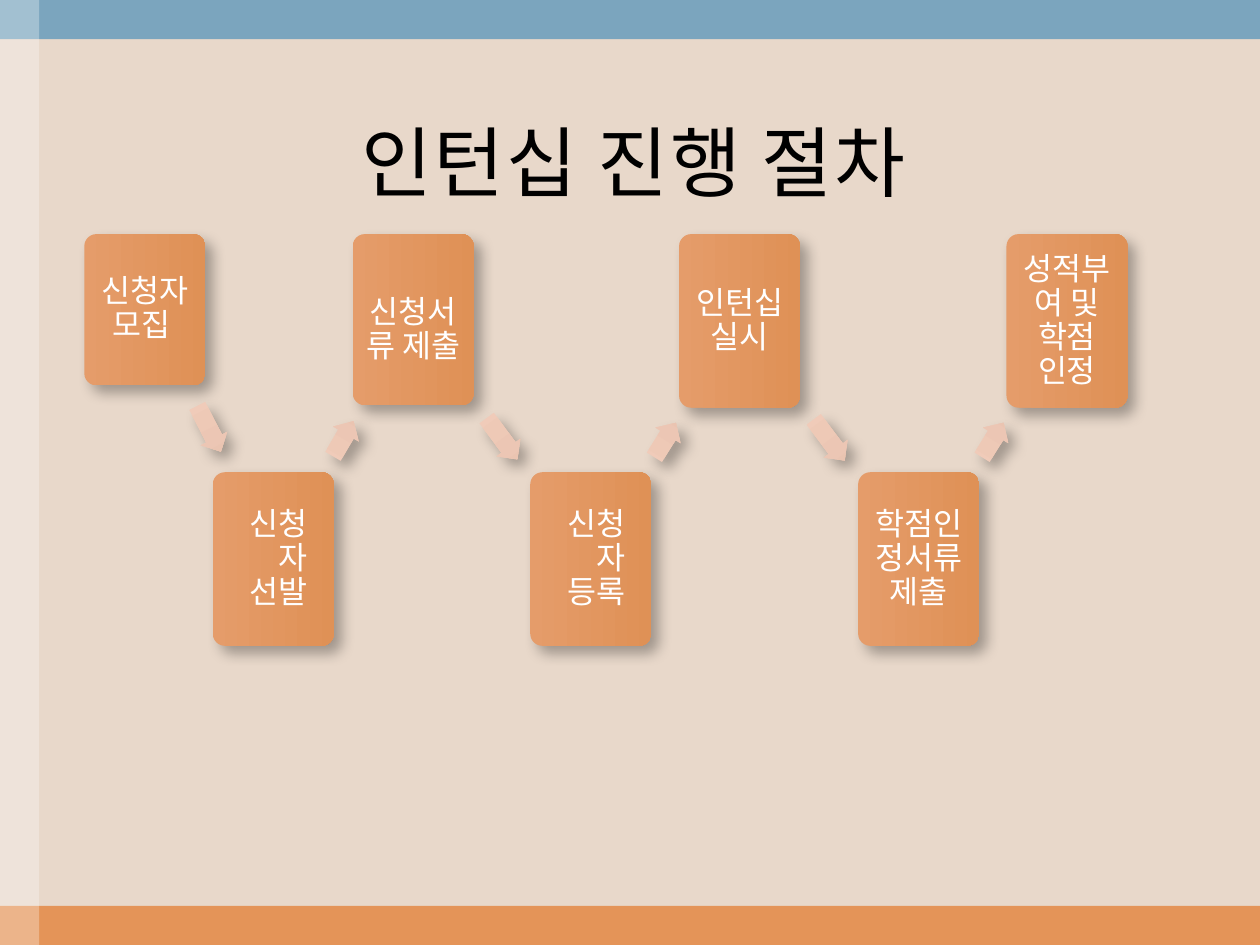
from math import atan2, degrees
from pptx import Presentation
from pptx.dml.color import RGBColor as Rgb
from pptx.enum.shapes import MSO_SHAPE as Kind
from pptx.enum.text import MSO_ANCHOR as Anchor, PP_ALIGN as Align
from pptx.oxml.ns import qn
from pptx.util import Cm, Pt
from lxml.etree import SubElement as Sub

HUES = {"sand": "E8D8CA", "blue": "7BA5BE", "rust": "E49458",
        "white": "FFFFFF", "black": "000000",
        "card": ("E59C6A", "DF9156"), "arrow": ("F0CBB9", "EAC4B1")}
FACE = "Noto Sans CJK KR"
WIDE, HIGH, EDGE = 25.4, 19.05, 0.79
STEPS = [("신청자 모집 ", 1.7, 3.05), ("신청자\v선발", 4.29, 3.5),
         ("신청서류 제출", 7.11, 3.45), ("신청자\v등록", 10.69, 3.5),
         ("인턴십 실시", 13.69, 3.5), ("학점인정서류 제출", 17.3, 3.5),
         ("성적부여 및 학점 인정", 20.29, 3.5)]
CARD, DROP = 2.44, 4.8


def hue(name):
    """Return the colour of the given name."""
    return Rgb.from_string(HUES[name])


def write(frame, text, size, tint, align=Align.CENTER):
    """Put one styled paragraph into a frame."""
    frame.word_wrap = True
    frame.vertical_anchor = Anchor.MIDDLE
    para = frame.paragraphs[0]
    para.text = text
    para.alignment = align
    font = para.font
    font.size, font.name = Pt(size), FACE
    font.color.rgb = hue(tint)
    props = para._p.pPr.find(qn("a:defRPr"))
    Sub(props, qn("a:ea")).set("typeface", FACE)
    return para


def band(slide, box, tint, alpha=None):
    """Draw a flat band, see-through if alpha is given."""
    shape = slide.shapes.add_shape(Kind.RECTANGLE, *map(Cm, box))
    shape.shadow.inherit = False
    shape.fill.solid()
    shape.fill.fore_color.rgb = hue(tint)
    shape.line.fill.background()
    if alpha:
        mark = shape._element.spPr.find(".//" + qn("a:srgbClr"))
        Sub(mark, qn("a:alpha")).set("val", str(alpha * 1000))


def block(slide, kind, box, tint):
    """Draw a shape with a gradient and a soft shadow."""
    shape = slide.shapes.add_shape(kind, *map(Cm, box))
    shape.fill.gradient()
    shape.fill.gradient_angle = 0
    for stop, code in zip(shape.fill.gradient_stops, HUES[tint]):
        stop.color.rgb = Rgb.from_string(code)
    for stop, place in zip(shape.fill.gradient_stops, (0, 1)):
        stop.position = place
    shape.line.fill.background()
    shape.shadow.inherit = False
    glow = Sub(shape._element.spPr.find(qn("a:effectLst")),
               qn("a:outerShdw"), blurRad=str(Pt(8)), dist=str(Pt(6)),
               dir="2700000", algn="tl", rotWithShape="0")
    mark = Sub(glow, qn("a:srgbClr"), val=HUES["black"])
    Sub(mark, qn("a:alpha"), val="31000")
    return shape


def frame(slide):
    """Draw the background and its edge bands."""
    fill = slide.background.fill
    fill.solid()
    fill.fore_color.rgb = hue("sand")
    band(slide, (0, HIGH - EDGE, WIDE, EDGE), "rust")
    band(slide, (0, 0, WIDE, EDGE), "blue")
    band(slide, (0, 0, EDGE, HIGH), "white", 30)


def title(slide, box, text):
    """Write the slide title."""
    area = slide.shapes.add_textbox(*map(Cm, box))
    para = write(area.text_frame, text, 44, "black")
    para.runs[0]._r.get_or_add_rPr().set("spc", "100")


def card(slide, box, text):
    """Draw one step card."""
    shape = block(slide, Kind.ROUNDED_RECTANGLE, box, "card")
    shape.adjustments[0] = 0.1
    area = shape.text_frame
    area.margin_left = area.margin_right = Cm(0.17)
    area.margin_top = area.margin_bottom = Cm(0.17)
    split = "\v" in text
    para = write(area, text, 18, "white",
                 Align.RIGHT if split else Align.CENTER)
    para.line_spacing = 0.9
    if split:
        area.margin_left, area.margin_right = Cm(0.1), Cm(0.45)
    if text.startswith("신청서류"):
        area.margin_left = area.margin_right = Cm(0.13)
        area.margin_top = Cm(0.6)


def arrow(slide, start, end):
    """Draw an arrow in the gap between two cards."""
    (left, top, wide, high), (nleft, ntop, nwide, nhigh) = start, end
    down = ntop > top
    midx = (left + wide + nleft) / 2
    midy = (top + high + ntop if down else ntop + nhigh + top) / 2
    size = 1.04 if down else 0.82
    shape = block(slide, Kind.RIGHT_ARROW,
                  (midx - size / 2, midy - 0.3, size, 0.6), "arrow")
    shape.adjustments[0] = 0.6
    rise = ntop + nhigh / 2 - top - high / 2
    shape.rotation = degrees(atan2(rise, nleft - left))


def flow(slide, top):
    """Lay out the steps in a zigzag joined by arrows."""
    last = None
    for index, (text, left, high) in enumerate(STEPS):
        box = (left, top + DROP * (index % 2), CARD, high)
        if last:
            arrow(slide, last, box)
        card(slide, box, text)
        last = box


def main():
    """Build and save the slide."""
    deck = Presentation()
    deck.slide_width, deck.slide_height = Cm(WIDE), Cm(HIGH)
    slide = deck.slides.add_slide(deck.slide_layouts[6])
    frame(slide)
    title(slide, (0.89, 1.93, 23.77, 2.62), "인턴십 진행 절차")
    flow(slide, 4.72)
    deck.save("out.pptx")


if __name__ == "__main__":
    main()
